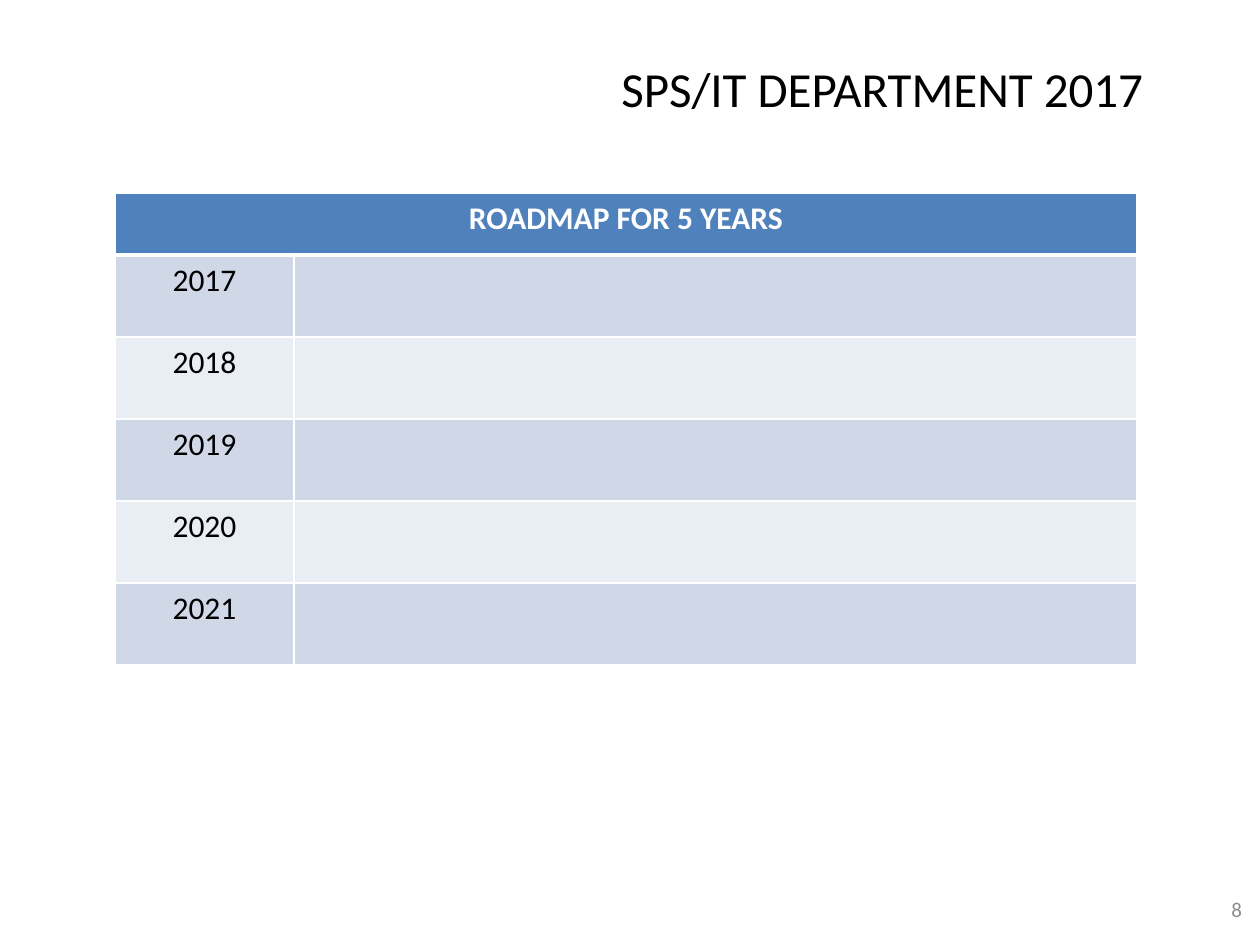
from dataclasses import dataclass

from pptx import Presentation
from pptx.dml.color import RGBColor as Rgb
from pptx.enum.text import MSO_ANCHOR as Anchor, PP_ALIGN as Align
from pptx.oxml.ns import qn
from pptx.util import Pt
from lxml.etree import SubElement

SCALE = 914400 / 126


@dataclass(frozen=True)
class Theme:
    """Hold the font, colours and type sizes of the slide."""
    font: str = "Calibri"
    ink: str = "000000"
    muted: str = "8C8C8C"
    white: str = "FFFFFF"
    header: str = "4F81BD"
    bands: tuple = ("D0D8E8", "E9EDF4")
    title_size: int = 28
    table_size: int = 18
    number_size: int = 12
    rule: int = 1
    header_rule: int = 3


THEME = Theme()


def px(length):
    """Turn pixels into EMU."""
    return round(length * SCALE)


def set_all(target, values):
    """Set every attribute named in a dict."""
    for name, value in values.items():
        setattr(target, name, value)


def write(frame, words, size, color, align, bold=False):
    """Write one formatted paragraph into a text frame."""
    paragraph = frame.paragraphs[0]
    paragraph.alignment = align
    run = paragraph.add_run()
    run.text = words
    set_all(run.font, {"name": THEME.font, "size": Pt(size), "bold": bold})
    run.font.color.rgb = Rgb.from_string(color)


def add_label(slide, box, words, size, color, anchor):
    """Add a right-aligned text box."""
    frame = slide.shapes.add_textbox(*map(px, box)).text_frame
    margins = {f"margin_{side}": px(13) for side in ("left", "top", "right", "bottom")}
    set_all(frame, {"word_wrap": True, "vertical_anchor": anchor, **margins})
    write(frame, words, size, color, Align.RIGHT)


def style_cell(cell, color, top, bottom):
    """Give a cell white borders and a solid fill."""
    properties = cell._tc.get_or_add_tcPr()
    widths = {"L": THEME.rule, "R": THEME.rule, "T": top, "B": bottom}
    for side, width in widths.items():
        line = SubElement(properties, qn(f"a:ln{side}"), w=str(Pt(width)))
        fill = SubElement(line, qn("a:solidFill"))
        SubElement(fill, qn("a:srgbClr"), val=THEME.white)
    cell.fill.solid()
    cell.fill.fore_color.rgb = Rgb.from_string(color)


def add_roadmap(slide, heading, years):
    """Add the roadmap table with a merged heading and one row per year."""
    column_widths = (179, 843)
    row_heights = [62] + [82] * len(years)
    box = (115, 193, sum(column_widths), sum(row_heights))
    roadmap = slide.shapes.add_table(len(row_heights), 2, *map(px, box)).table
    for column, width in zip(roadmap.columns, column_widths):
        column.width = px(width)
    for index, (row, height) in enumerate(zip(roadmap.rows, row_heights)):
        row.height = px(height)
        color = THEME.bands[(index - 1) % 2] if index else THEME.header
        top = THEME.header_rule if index == 1 else THEME.rule
        bottom = THEME.rule if index else THEME.header_rule
        for cell in row.cells:
            style_cell(cell, color, top, bottom)
    roadmap.cell(0, 0).merge(roadmap.cell(0, 1))
    write(roadmap.cell(0, 0).text_frame, heading, THEME.table_size,
          THEME.white, Align.CENTER, bold=True)
    for index, year in enumerate(years, 1):
        write(roadmap.cell(index, 0).text_frame, str(year), THEME.table_size,
              THEME.ink, Align.CENTER)


def main():
    """Build the roadmap slide and save it."""
    deck = Presentation()
    set_all(deck, {"slide_width": px(1260), "slide_height": px(945)})
    slide = deck.slides.add_slide(deck.slide_layouts[6])
    add_label(slide, (21, 29, 1135, 101), "SPS/IT DEPARTMENT 2017",
              THEME.title_size, THEME.ink, Anchor.BOTTOM)
    add_label(slide, (1179, 873, 76, 72), "8",
              THEME.number_size, THEME.muted, Anchor.MIDDLE)
    add_roadmap(slide, "ROADMAP FOR 5 YEARS", range(2017, 2022))
    deck.save("out.pptx")


if __name__ == "__main__":
    main()
